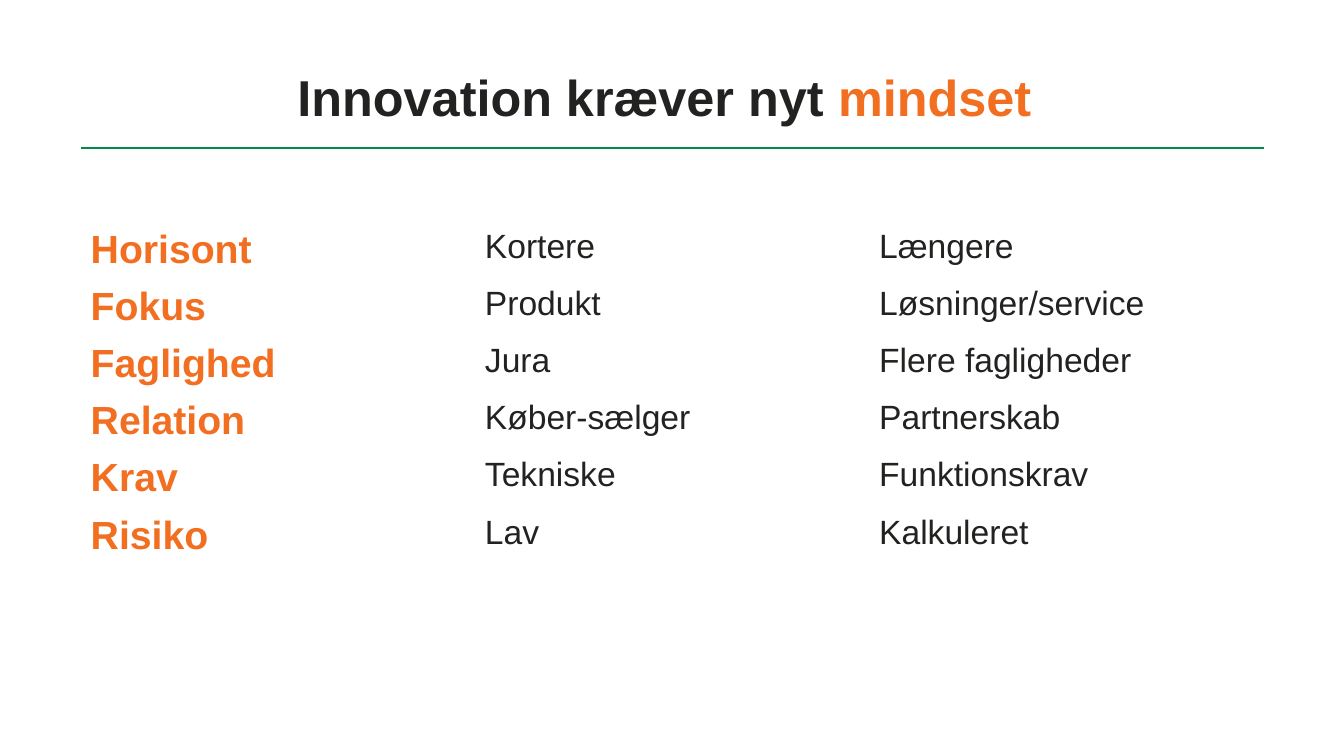
from lxml import etree
from pptx import Presentation
from pptx.dml.color import RGBColor
from pptx.enum.shapes import MSO_CONNECTOR
from pptx.enum.text import MSO_ANCHOR, PP_ALIGN
from pptx.oxml.ns import qn
from pptx.util import Inches, Pt

STRAIGHT = MSO_CONNECTOR.STRAIGHT
BOTTOM = MSO_ANCHOR.BOTTOM
CENTER = PP_ALIGN.CENTER

FONT = "Arial"
DARK, ORANGE, GREEN = "222221", "F26F21", "008C44"
TITLE = [("Innovation kræver nyt ", DARK), ("mindset", ORANGE)]
ROWS = [
    ("Horisont", "Kortere", "Længere"),
    ("Fokus", "Produkt", "Løsninger/service"),
    ("Faglighed", "Jura", "Flere fagligheder"),
    ("Relation", "Køber-sælger", "Partnerskab"),
    ("Krav", "Tekniske", "Funktionskrav"),
    ("Risiko", "Lav", "Kalkuleret"),
]

SLIDE_WIDTH, SLIDE_HEIGHT = 13.33, 7.5
LEFT = 0.8
COLUMN_WIDTH, ROW_HEIGHT = 3.91, 0.41
TABLE_TOP = 2.21
RULE_RIGHT, RULE_Y = 12.54, 1.47


def color(value):
    return RGBColor.from_string(value)


def add_span(para, text, size, shade, bold):
    span = para.add_run()
    span.text = text
    span.font.name = FONT
    span.font.size = Pt(size)
    span.font.bold = bold
    span.font.color.rgb = color(shade)


def add_rule(page):
    rule = page.shapes.add_connector(
        STRAIGHT, Inches(LEFT), Inches(RULE_Y), Inches(RULE_RIGHT), Inches(RULE_Y))
    rule.line.color.rgb = color(GREEN)
    rule.line.width = Pt(1.5)
    etree.SubElement(rule._element.spPr, qn("a:effectLst"))


def add_title(page):
    box = page.shapes.add_textbox(Inches(0.78), Inches(0.4), Inches(11.62), Inches(0.86))
    frame = box.text_frame
    frame.word_wrap = True
    frame.vertical_anchor = BOTTOM
    frame.margin_left = frame.margin_right = frame.margin_top = frame.margin_bottom = 0
    para = frame.paragraphs[0]
    para.alignment = CENTER
    para.line_spacing = 0.88
    for text, shade in TITLE:
        add_span(para, text, 36, shade, True)


def add_comparison(page):
    columns = len(ROWS[0])
    table = page.shapes.add_table(
        len(ROWS), columns, Inches(LEFT), Inches(TABLE_TOP),
        Inches(columns * COLUMN_WIDTH), Inches(len(ROWS) * ROW_HEIGHT)).table
    table.first_row = False
    table.horz_banding = False
    for row, texts in enumerate(ROWS):
        for column, text in enumerate(texts):
            cell = table.cell(row, column)
            cell.fill.background()
            style = (24, DARK, False) if column else (28, ORANGE, True)
            add_span(cell.text_frame.paragraphs[0], text, *style)


def main():
    deck = Presentation()
    deck.slide_width = Inches(SLIDE_WIDTH)
    deck.slide_height = Inches(SLIDE_HEIGHT)
    page = deck.slides.add_slide(deck.slide_layouts[6])
    add_rule(page)
    add_title(page)
    add_comparison(page)
    deck.save("out.pptx")


if __name__ == "__main__":
    main()
